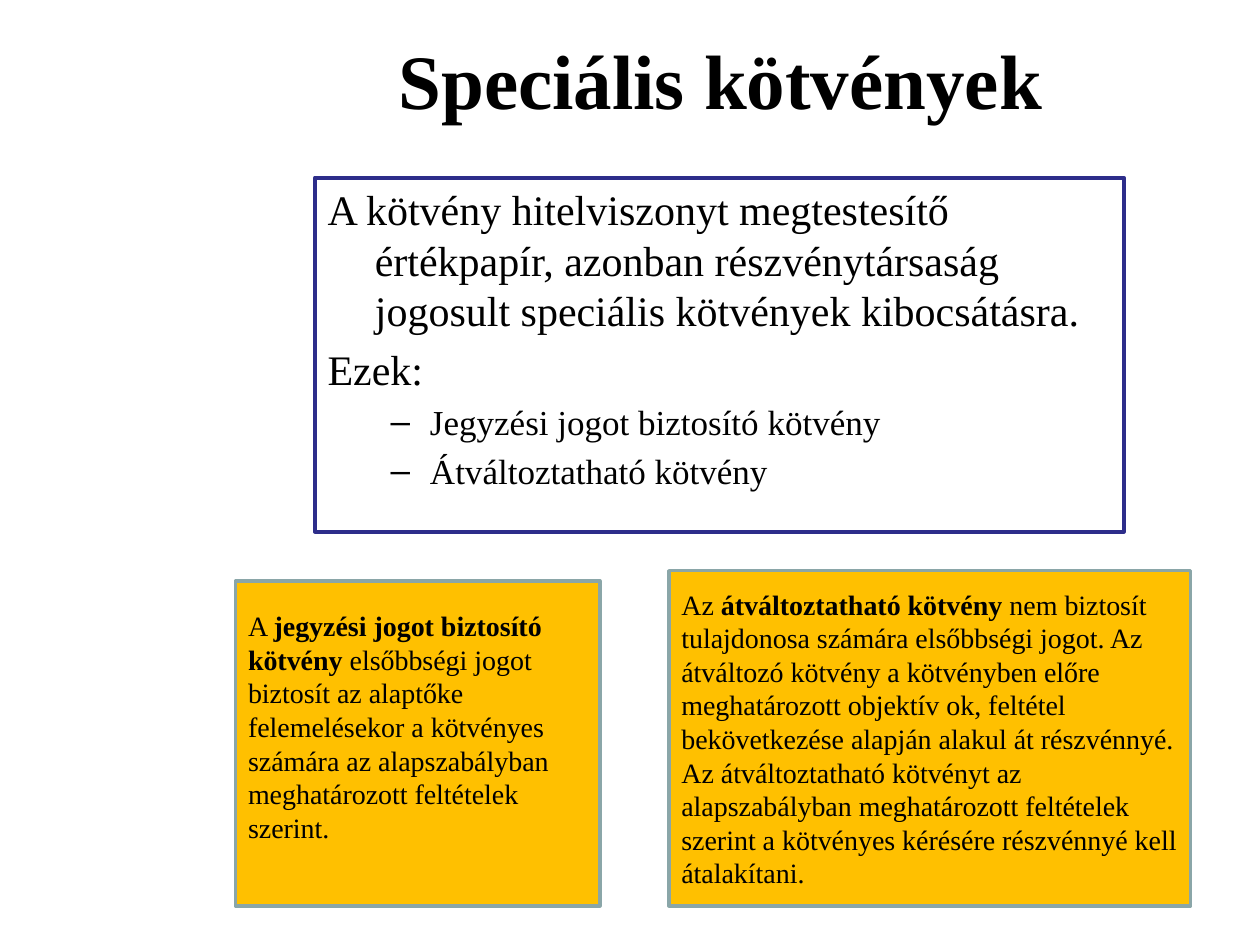
from lxml.etree import SubElement
from pptx import Presentation
from pptx.dml.color import RGBColor
from pptx.enum.shapes import MSO_SHAPE
from pptx.enum.text import MSO_ANCHOR, MSO_AUTO_SIZE, PP_ALIGN
from pptx.oxml.ns import qn
from pptx.util import Pt

BLACK = RGBColor(0x00, 0x00, 0x00)
NAVY = RGBColor(0x2D, 0x2D, 0x8A)
AMBER = RGBColor(0xFF, 0xC0, 0x00)
GREY_TEAL = RGBColor(0x8A, 0xA6, 0xA8)

TITLE_BOX = (134.64, 0, 554.4, 90)
LIST_BOX = (180, 101.52, 462.24, 202.32)
SUBSCRIPTION_BOX = (134.64, 331.92, 208.08, 185.76)
CONVERTIBLE_BOX = (382.32, 326.16, 298.08, 191.52)

LIST_ITEMS = [
    (0, "A kötvény hitelviszonyt megtestesítő értékpapír, azonban részvénytársaság "
        "jogosult speciális kötvények kibocsátásra."),
    (0, "Ezek:"),
    (1, "Jegyzési jogot biztosító kötvény"),
    (1, "Átváltoztatható kötvény"),
]
SUBSCRIPTION_SPANS = [
    ("A ", False),
    ("jegyzési jogot biztosító kötvény ", True),
    ("elsőbbségi jogot biztosít az alaptőke felemelésekor a kötvényes számára "
     "az alapszabályban meghatározott feltételek szerint.", False),
]
CONVERTIBLE_SPANS = [
    ("Az ", False),
    ("átváltoztatható kötvény ", True),
    ("nem biztosít tulajdonosa számára elsőbbségi jogot. Az átváltozó kötvény "
     "a kötvényben előre meghatározott objektív ok, feltétel bekövetkezése alapján "
     "alakul át részvénnyé. Az átváltoztatható kötvényt az alapszabályban "
     "meghatározott feltételek szerint a kötvényes kérésére részvénnyé kell "
     "átalakítani.", False),
]


def apply_format(target, values):
    """Set each named attribute of the target."""
    for name, value in values.items():
        setattr(target, name, value)


def place(shape, box):
    """Move a shape to a box given in points."""
    names = ("left", "top", "width", "height")
    apply_format(shape, {name: Pt(length) for name, length in zip(names, box)})


def add_span(paragraph, text, size, bold=False):
    """Append one formatted run to a paragraph."""
    span = paragraph.add_run()
    span.text = text
    apply_format(span.font, {"name": "Times New Roman", "size": Pt(size), "bold": bold})
    span.font.color.rgb = BLACK


def set_line(shape, color, width):
    """Give a shape a solid outline."""
    shape.line.color.rgb = color
    shape.line.width = Pt(width)


def fill_title(page, box):
    """Write the heading in the title placeholder."""
    title = page.shapes.title
    place(title, box)
    apply_format(title.text_frame, {
        "auto_size": MSO_AUTO_SIZE.NONE, "vertical_anchor": MSO_ANCHOR.MIDDLE})
    add_span(title.text_frame.paragraphs[0], "Speciális kötvények", 44, True)


def fill_list(page, box):
    """Write the framed list in the body placeholder."""
    body = page.placeholders[1]
    place(body, box)
    set_line(body, NAVY, 2.25)
    frame = body.text_frame
    frame.auto_size = MSO_AUTO_SIZE.NONE
    for index, (level, text) in enumerate(LIST_ITEMS):
        paragraph = frame.add_paragraph() if index else frame.paragraphs[0]
        paragraph.level = level
        if level == 0:
            SubElement(paragraph._p.get_or_add_pPr(), qn("a:buNone"))
        add_span(paragraph, text, 20 if level else 24)
    frame.paragraphs[0].space_before = Pt(0)


def add_definition(page, box, spans, bottom_margin=3.6):
    """Draw an amber box that explains one kind of bond."""
    panel = page.shapes.add_shape(MSO_SHAPE.RECTANGLE, *map(Pt, box))
    panel.shadow.inherit = False
    panel.fill.solid()
    panel.fill.fore_color.rgb = AMBER
    set_line(panel, GREY_TEAL, 2)
    apply_format(panel.text_frame, {
        "word_wrap": True, "vertical_anchor": MSO_ANCHOR.MIDDLE,
        "margin_bottom": Pt(bottom_margin)})
    paragraph = panel.text_frame.paragraphs[0]
    paragraph.alignment = PP_ALIGN.LEFT
    for text, bold in spans:
        add_span(paragraph, text, 16, bold)


def main():
    """Build the slide and save the deck."""
    deck = Presentation()
    apply_format(deck, {"slide_width": Pt(720), "slide_height": Pt(540)})
    page = deck.slides.add_slide(deck.slide_layouts[1])
    fill_title(page, TITLE_BOX)
    fill_list(page, LIST_BOX)
    add_definition(page, SUBSCRIPTION_BOX, SUBSCRIPTION_SPANS, bottom_margin=23)
    add_definition(page, CONVERTIBLE_BOX, CONVERTIBLE_SPANS)
    deck.save("out.pptx")


if __name__ == "__main__":
    main()
